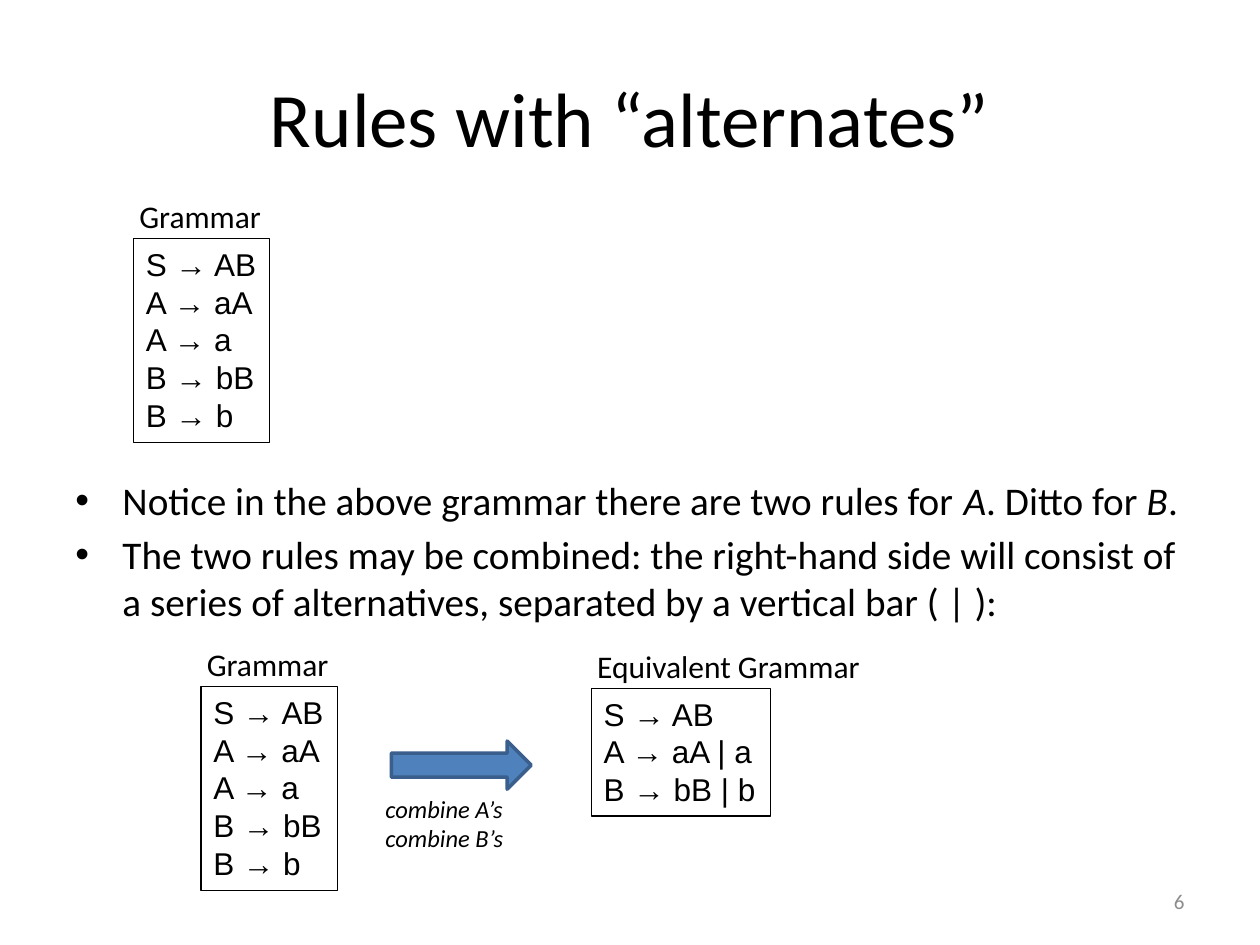
from lxml.etree import SubElement
from pptx import Presentation
from pptx.dml.color import RGBColor
from pptx.enum.shapes import MSO_SHAPE
from pptx.enum.text import MSO_ANCHOR, MSO_AUTO_SIZE, PP_ALIGN
from pptx.oxml.ns import qn
from pptx.util import Cm, Pt

COLORS = {"text": "000000", "number": "8C8C8C", "arrow": "4F81BD", "arrow_line": "3A5F8C"}

# Content: each paragraph is a list of (text, italic) runs
TITLE = "Rules with “alternates”"
BULLETS = [
    [("Notice in the above grammar there are two rules for ", False), ("A", True),
     (". Ditto for ", False), ("B", True), (".", False)],
    [("The two rules may be combined: the right-hand side will consist of a series "
      "of alternatives, separated by a vertical bar ( | ):", False)],
]
RULES = ["S → AB", "A → aA", "A → a", "B → bB", "B → b"]
COMBINED = ["S → AB", "A → aA | a", "B → bB | b"]
CAPTION = "combine A’s combine B’s"
NUMBER = "6"

# Grammar boxes in cm: label, label width, rules, left, top, width
GRAMMARS = [
    ("Grammar", 3, RULES, 2.69, 4.81, 2.75),
    ("Grammar", 3, RULES, 4.05, 13.84, 2.75),
    ("Equivalent Grammar", 5.87, COMBINED, 11.92, 13.88, 3.61),
]
ROW, PADDING = 0.77, 0.26
LABEL_DX, LABEL_DY, LABEL_H = -0.13, -0.97, 1.02


def rgb(name):
    return RGBColor.from_string(COLORS[name])


def plain(text, italic=False):
    return [(text, italic)]


def add_text(s, box, paragraphs, size, font="Calibri", color="text", wrap=True,
             anchor=MSO_ANCHOR.TOP, align=PP_ALIGN.LEFT):
    sp = s.shapes.add_textbox(*map(Cm, box))
    tf = sp.text_frame
    # Unwrapped text needs a box that grows, or it still breaks at the edge
    fit = MSO_AUTO_SIZE.NONE if wrap else MSO_AUTO_SIZE.SHAPE_TO_FIT_TEXT
    for name, value in {"word_wrap": wrap, "auto_size": fit, "vertical_anchor": anchor}.items():
        setattr(tf, name, value)
    for i, runs in enumerate(paragraphs):
        p = tf.paragraphs[0] if i == 0 else tf.add_paragraph()
        p.alignment = align
        for text, italic in runs:
            r = p.add_run()
            r.text = text
            for name, value in {"name": font, "size": Pt(size), "italic": italic}.items():
                setattr(r.font, name, value)
            r.font.color.rgb = rgb(color)
    return sp


def add_bullet(p):
    pPr = p._p.get_or_add_pPr()
    pPr.set("marL", str(Cm(0.95)))
    pPr.set("indent", str(Cm(-0.95)))
    SubElement(pPr, qn("a:buFont")).set("typeface", "Arial")
    SubElement(pPr, qn("a:buChar")).set("char", "•")


def add_grammar(s, label, label_width, rules, left, top, width):
    sp = add_text(s, (left, top, width, PADDING + ROW * len(rules)),
                  [plain(rule) for rule in rules], 18, font="Arial", wrap=False)
    sp.line.color.rgb = rgb("text")
    sp.line.width = Pt(0.75)
    add_text(s, (left + LABEL_DX, top + LABEL_DY, label_width, LABEL_H),
             [plain(label)], 18, wrap=False)


def main():
    prs = Presentation()
    prs.slide_width, prs.slide_height = Cm(25.4), Cm(19.05)
    s = prs.slides.add_slide(prs.slide_layouts[6])

    # Title, bullets and slide number
    add_text(s, (1.27, 0.76, 22.86, 3.18), [plain(TITLE)], 44,
             anchor=MSO_ANCHOR.MIDDLE, align=PP_ALIGN.CENTER)
    body = add_text(s, (1.27, 9.47, 22.86, 3), BULLETS, 22.4)
    for p in body.text_frame.paragraphs:
        p.space_before = Pt(4)
        add_bullet(p)
    add_text(s, (18.2, 17.65, 5.93, 1.02), [plain(NUMBER)], 12, color="number",
             anchor=MSO_ANCHOR.MIDDLE, align=PP_ALIGN.RIGHT)

    # Grammars with their labels
    for grammar in GRAMMARS:
        add_grammar(s, *grammar)

    # Arrow and its caption
    arrow = s.shapes.add_shape(MSO_SHAPE.RIGHT_ARROW, Cm(7.89), Cm(14.94), Cm(2.82), Cm(0.97))
    arrow.shadow.inherit = False
    arrow.fill.solid()
    arrow.fill.fore_color.rgb = rgb("arrow")
    arrow.line.color.rgb = rgb("arrow_line")
    arrow.line.width = Pt(2)
    add_text(s, (7.52, 15.88, 3.02, 1.45), [plain(CAPTION, True)], 14)

    prs.save("out.pptx")


if __name__ == "__main__":
    main()
